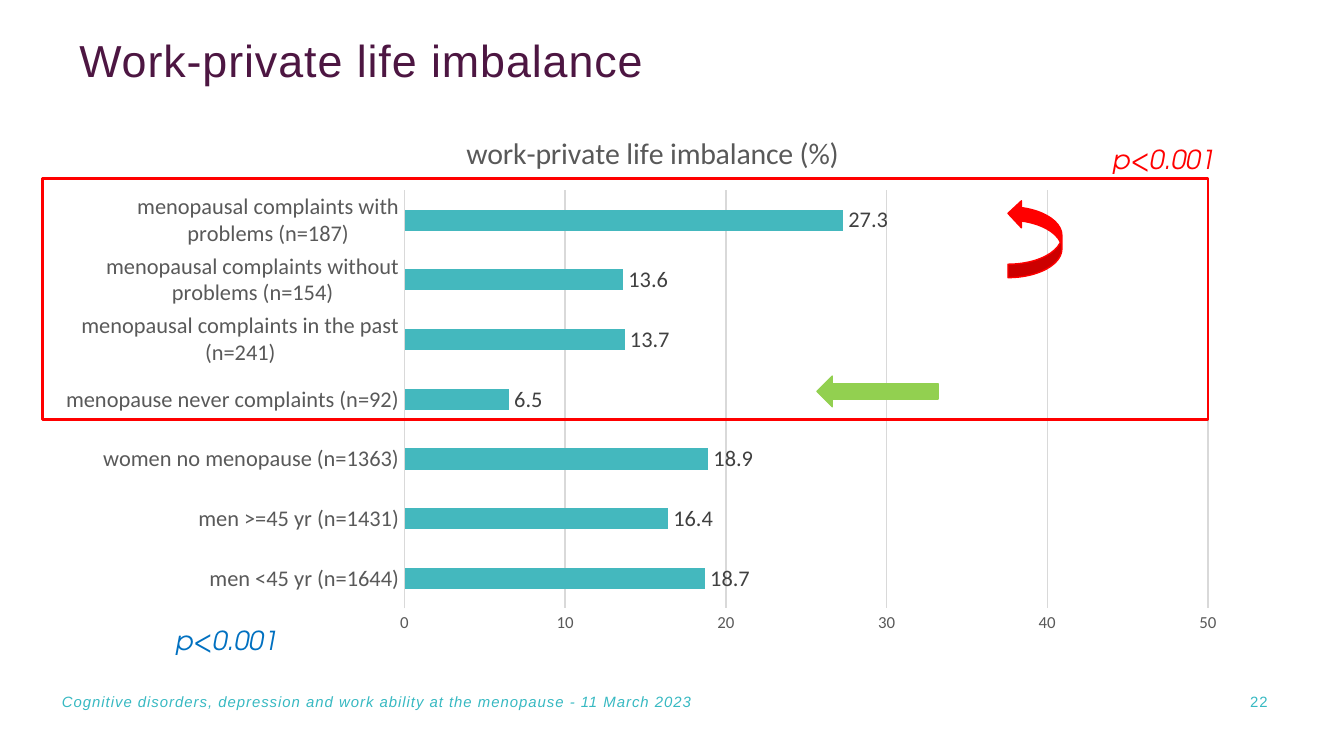
from dataclasses import dataclass

from lxml.etree import SubElement
from pptx import Presentation
from pptx.chart.data import CategoryChartData
from pptx.dml.color import RGBColor
from pptx.enum.chart import XL_CHART_TYPE, XL_LABEL_POSITION, XL_TICK_MARK
from pptx.enum.shapes import MSO_SHAPE
from pptx.enum.text import MSO_ANCHOR, MSO_AUTO_SIZE, PP_ALIGN
from pptx.oxml import parse_xml
from pptx.oxml.ns import nsdecls, qn
from pptx.util import Cm, Pt


@dataclass(frozen=True)
class Theme:
    plum: str = "4D1642"
    teal: str = "37B9C2"
    bar: str = "44B8BE"
    blue: str = "0070C0"
    red: str = "FF0000"
    green: str = "92D050"
    grid: str = "D9D9D9"
    axis_text: str = "595959"
    label_text: str = "404040"
    heading_size: float = 24
    chart_title_size: float = 16
    note_size: float = 14
    label_size: float = 12
    chart_size: float = 10
    tick_size: float = 9
    footer_size: float = 8
    sans: str = "Arial"
    chart_font: str = "Calibri"
    note_font: str = "TeX Gyre Adventor"


THEME = Theme()
CHART_TITLE = "work-private life imbalance (%)"
IMBALANCE = {
    "men <45 yr (n=1644)": 18.7,
    "men >=45 yr (n=1431)": 16.4,
    "women no menopause (n=1363)": 18.9,
    "menopause never complaints (n=92)": 6.5,
    "menopausal complaints in the past (n=241)": 13.7,
    "menopausal complaints without problems (n=154)": 13.6,
    "menopausal complaints with problems (n=187)": 27.3,
}
PLOT_LAYOUT = {"x": 0.29, "y": 0.15, "w": 0.68, "h": 0.78}


def apply_format(target, values):
    for name, value in values.items():
        setattr(target, name, value)


def style_font(font, size, color, **values):
    apply_format(font, {"size": Pt(size), "bold": False, **values})
    font.color.rgb = RGBColor.from_string(color)


def style_line(line, color, width):
    line.color.rgb = RGBColor.from_string(color)
    line.width = Pt(width)


def place(left, top, width, height):
    return Cm(left), Cm(top), Cm(width), Cm(height)


def add_text(slide, area, text, font, frame=None, para_format=None, spacing=None):
    box = slide.shapes.add_textbox(*place(*area))
    apply_format(box.text_frame, {"word_wrap": True, **(frame or {})})
    para = box.text_frame.paragraphs[0]
    apply_format(para, para_format or {})
    span = para.add_run()
    span.text = text
    style_font(span.font, **font)
    if spacing:
        span._r.get_or_add_rPr().set("spc", str(int(spacing * 100)))


def add_mark(slide, kind, area, color, width, filled=True, flipped=False):
    mark = slide.shapes.add_shape(kind, *place(*area))
    mark.shadow.inherit = False
    if filled:
        mark.fill.solid()
        mark.fill.fore_color.rgb = RGBColor.from_string(color)
    else:
        mark.fill.background()
    style_line(mark.line, color, width)
    if flipped:
        mark._element.spPr.find(qn("a:xfrm")).set("flipV", "1")


def fix_plot_area(chart):
    plot_area = chart._chartSpace.find(qn("c:chart")).find(qn("c:plotArea"))
    for old_layout in plot_area.findall(qn("c:layout")):
        plot_area.remove(old_layout)
    layout = parse_xml(f"<c:layout {nsdecls('c')}><c:manualLayout/></c:layout>")
    settings = {"layoutTarget": "inner", "xMode": "edge", "yMode": "edge", **PLOT_LAYOUT}
    for name, value in settings.items():
        SubElement(layout[0], qn(f"c:{name}")).set("val", str(value))
    plot_area.insert(0, layout)


def style_axes(chart):
    category_axis, value_axis = chart.category_axis, chart.value_axis
    for axis, size in ((category_axis, THEME.label_size), (value_axis, THEME.tick_size)):
        apply_format(axis, {"major_tick_mark": XL_TICK_MARK.NONE,
                            "minor_tick_mark": XL_TICK_MARK.NONE})
        style_font(axis.tick_labels.font, size, THEME.axis_text, name=THEME.chart_font)
    style_line(category_axis.format.line, THEME.grid, 0.75)
    apply_format(value_axis, {"minimum_scale": 0, "maximum_scale": 50,
                              "major_unit": 10, "has_major_gridlines": True})
    value_axis.format.line.fill.background()
    style_line(value_axis.major_gridlines.format.line, THEME.grid, 0.75)


def add_bar_chart(slide, area):
    data = CategoryChartData()
    data.categories = list(IMBALANCE)
    data.add_series(CHART_TITLE, list(IMBALANCE.values()))
    chart = slide.shapes.add_chart(XL_CHART_TYPE.BAR_CLUSTERED, *place(*area), data).chart
    style_font(chart.font, THEME.chart_size, "000000", name=THEME.chart_font)
    apply_format(chart, {"has_legend": False, "has_title": True})
    title = chart.chart_title
    title.include_in_layout = False
    title.text_frame.text = CHART_TITLE
    style_font(title.text_frame.paragraphs[0].runs[0].font, THEME.chart_title_size,
               THEME.axis_text, name=THEME.chart_font)
    style_axes(chart)
    plot = chart.plots[0]
    apply_format(plot, {"gap_width": 182, "vary_by_categories": False,
                        "has_data_labels": True})
    apply_format(plot.data_labels, {"show_value": True, "number_format": "0.0",
                                    "number_format_is_linked": False,
                                    "position": XL_LABEL_POSITION.OUTSIDE_END})
    style_font(plot.data_labels.font, THEME.label_size, THEME.label_text,
               name=THEME.chart_font)
    fill = plot.series[0].format.fill
    fill.solid()
    fill.fore_color.rgb = RGBColor.from_string(THEME.bar)
    fix_plot_area(chart)


def main():
    deck = Presentation()
    apply_format(deck, {"slide_width": Cm(25.4), "slide_height": Cm(14.29)})
    page = deck.slides.add_slide(deck.slide_layouts[6])
    no_margins = {f"margin_{side}": 0 for side in ("left", "top", "right", "bottom")}
    middle = {"vertical_anchor": MSO_ANCHOR.MIDDLE}
    footer_font = {"size": THEME.footer_size, "color": THEME.teal, "name": THEME.sans}

    add_bar_chart(page, (1.17, 2.08, 22.33, 10.13))
    add_text(page, (1.5, 0.81, 18.75, 1.55), "Work-private life imbalance",
             {"size": THEME.heading_size, "color": THEME.plum, "name": THEME.sans},
             no_margins, {"line_spacing": 0.8}, 0.5)
    add_text(page, (20.02, 12.88, 4.19, 0.76), "22", footer_font, middle,
             {"alignment": PP_ALIGN.RIGHT}, 0.5)
    for left, top, color in ((3.07, 11.68, THEME.blue), (20.78, 2.59, THEME.red)):
        add_text(page, (left, top, 2.72, 0.86), "p<0.001",
                 {"size": THEME.note_size, "color": color,
                  "name": THEME.note_font, "italic": True},
                 {"auto_size": MSO_AUTO_SIZE.SHAPE_TO_FIT_TEXT})
    add_mark(page, MSO_SHAPE.RECTANGLE, (0.81, 3.38, 22.02, 4.55), THEME.red, 1.5,
             filled=False)
    add_text(page, (1.17, 12.88, 20.37, 0.76),
             "Cognitive disorders, depression and work ability at the menopause - 11 March 2023",
             {**footer_font, "italic": True}, {**no_margins, **middle}, spacing=0.5)
    add_mark(page, MSO_SHAPE.LEFT_ARROW, (15.44, 7.11, 2.29, 0.58), THEME.green, 0.75)
    add_mark(page, MSO_SHAPE.CURVED_LEFT_ARROW, (19.05, 3.78, 1.02, 1.47), THEME.red,
             0.75, flipped=True)
    deck.save("out.pptx")


if __name__ == "__main__":
    main()
